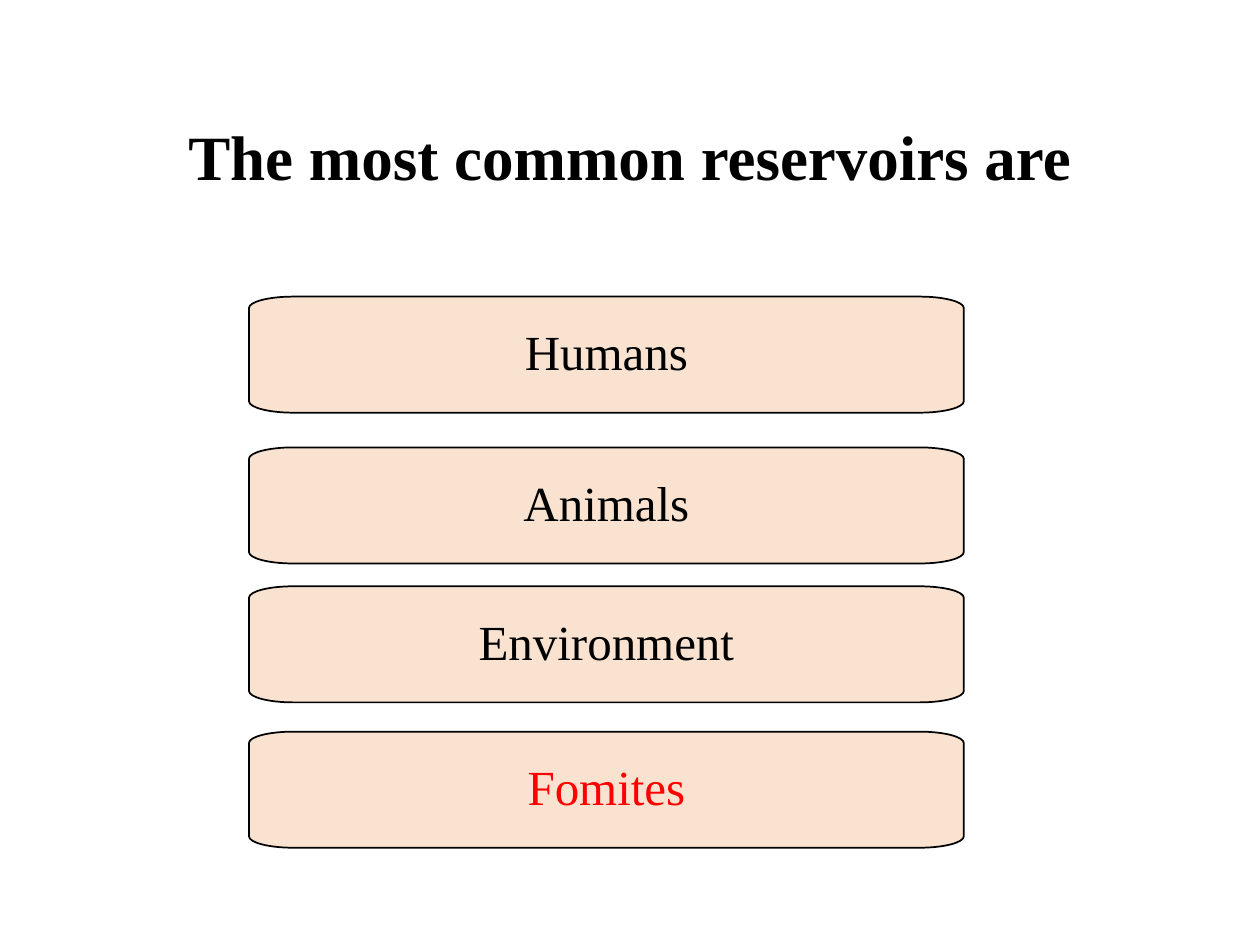
from lxml.etree import SubElement
from pptx import Presentation
from pptx.dml.color import RGBColor
from pptx.enum.text import MSO_ANCHOR, PP_ALIGN
from pptx.oxml.ns import qn
from pptx.util import Cm, Pt

TITLE = "The most common reservoirs are"
BARS = [
    ("Humans", 5.98, "000000"),
    ("Animals", 9.02, "000000"),
    ("Environment", 11.82, "000000"),
    ("Fomites", 14.75, "FF0000"),
]
LEFT, WIDTH, HEIGHT = 5.02, 14.41, 2.34
CURVE_X, CURVE_Y = 0.89, 0.23
PULL = 0.45


def color(code):
    return RGBColor.from_string(code)


def write(shape, text, size, code, anchor, bold=False):
    frame = shape.text_frame
    frame.text = text
    frame.word_wrap = True
    frame.vertical_anchor = anchor
    para = frame.paragraphs[0]
    para.alignment = PP_ALIGN.CENTER
    font = para.font
    font.name, font.size, font.bold = "Times New Roman", Pt(size), bold
    font.color.rgb = color(code)
    return frame, para


def outline(top):
    """Return each corner's start, two handles and end, clockwise."""
    right, low = LEFT + WIDTH, top + HEIGHT
    across, down = (CURVE_X, 0), (0, CURVE_Y)
    back, up = (-CURVE_X, 0), (0, -CURVE_Y)
    corners = [
        (LEFT, top, down, across),
        (right, top, back, down),
        (right, low, up, back),
        (LEFT, low, across, up),
    ]
    return [
        (Cm(x + dx * part), Cm(y + dy * part))
        for x, y, enter, leave in corners
        for (dx, dy), part in [(enter, 1), (enter, PULL), (leave, PULL), (leave, 1)]
    ]


def bend(shape):
    lines = list(shape._element.iter(qn("a:lnTo")))
    for i in range(0, len(lines), 4):
        curve = SubElement(lines[i].getparent(), qn("a:cubicBezTo"))
        lines[i].addprevious(curve)
        for line in lines[i:i + 3]:
            curve.append(line[0])
            line.getparent().remove(line)


def add_bar(slide, text, top, code):
    start, *rest = outline(top)
    draft = slide.shapes.build_freeform(*start)
    draft.add_line_segments([*rest, start], close=True)
    bar = draft.convert_to_shape()
    bend(bar)
    bar.shadow.inherit = False
    bar.fill.solid()
    bar.fill.fore_color.rgb = color("F9E2D0")
    bar.line.color.rgb = color("000000")
    bar.line.width = Pt(1)
    frame, para = write(bar, text, 28, code, MSO_ANCHOR.MIDDLE)
    frame.margin_left = frame.margin_right = Cm(0.13)
    frame.margin_top = frame.margin_bottom = Cm(0.1)
    para.line_spacing = 0.9


def main():
    deck = Presentation()
    deck.slide_width, deck.slide_height = Cm(25.4), Cm(19.05)
    slide = deck.slides.add_slide(deck.slide_layouts[5])
    title = slide.shapes.title
    title.left, title.top = Cm(1.52), Cm(1.39)
    title.width, title.height = Cm(22.35), Cm(2.64)
    write(title, TITLE, 36, "000000", MSO_ANCHOR.BOTTOM, bold=True)
    for bar in BARS:
        add_bar(slide, *bar)
    deck.save("out.pptx")


if __name__ == "__main__":
    main()
